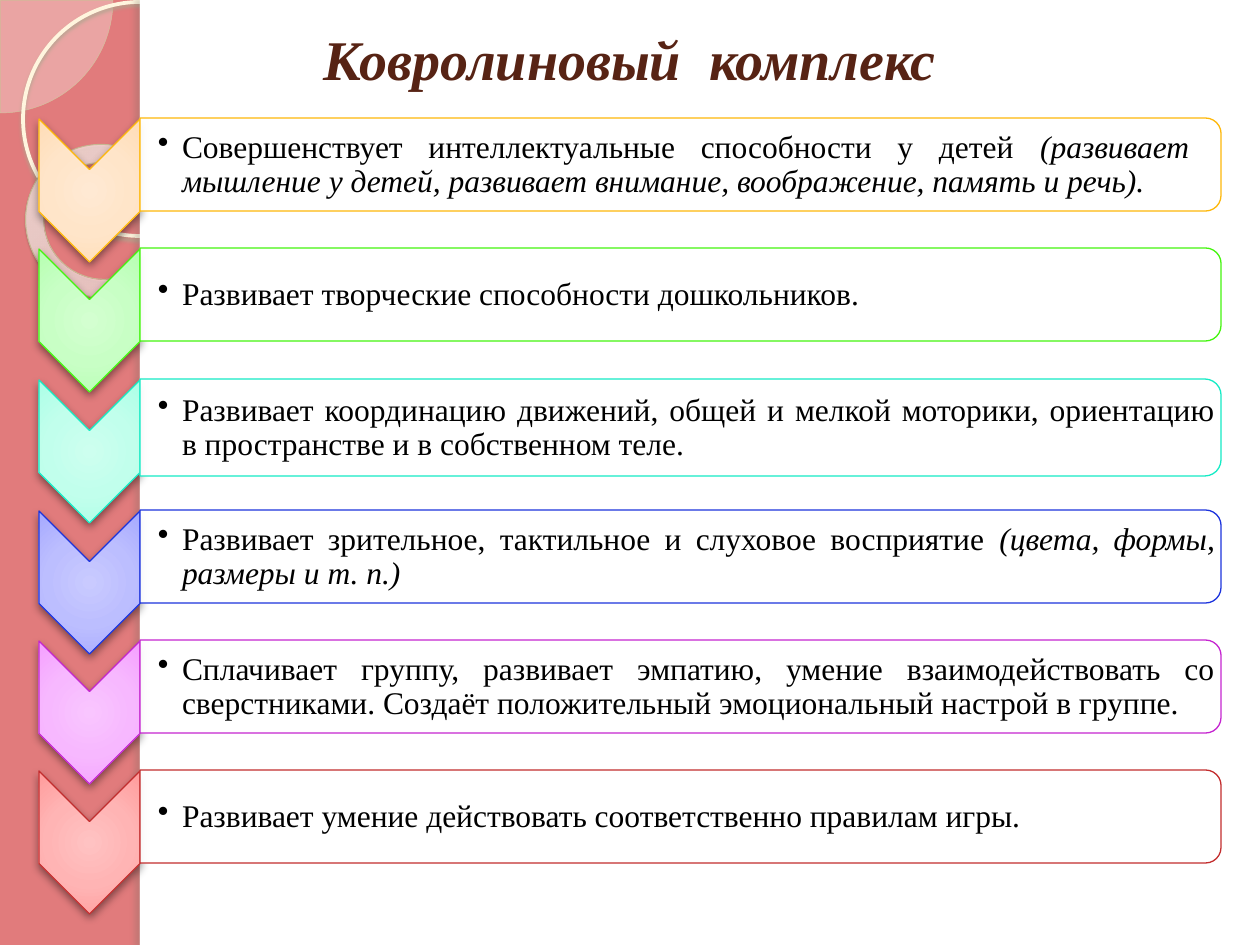
from lxml.etree import SubElement
from pptx import Presentation
from pptx.dml.color import RGBColor
from pptx.enum.shapes import MSO_SHAPE
from pptx.enum.text import MSO_ANCHOR, PP_ALIGN
from pptx.oxml.ns import qn
from pptx.util import Inches, Pt

EMU_PER_PX = Inches(1) / 126
FONT = "Times New Roman"
WHITE = RGBColor(255, 255, 255)
BLACK = RGBColor(0, 0, 0)
CORAL = RGBColor(0xE1, 0x7B, 0x7C)
BROWN = RGBColor(0x57, 0x23, 0x14)
CREAM = RGBColor(0xFE, 0xFA, 0xF4)
IVORY = RGBColor(0xFF, 0xF5, 0xDE)
SAND = RGBColor(0xD3, 0xC3, 0x9F)
TAN = RGBColor(0xC7, 0xB8, 0x93)
RING_STOPS = [(0, RGBColor(0xFF, 0xFC, 0xF6), 70), (70, RGBColor(0xFF, 0xFE, 0xFB), 55),
              (100, RGBColor(0xF0, 0xD2, 0x8E), 60)]
CIRCLE_SHADOW = (RGBColor(0xB0, 0xA6, 0x8F), 85, 2, 2, 90)
RING_SHADOW = (RGBColor(0x5A, 0x54, 0x44), 35, 1, 1.2, 75)
EDGE_SHADOW = (RGBColor(0x73, 0x6F, 0x63), 25, 3, 3, 180)
CHEVRON_SHADOW = (BLACK, 43, 5, 2, 90)

FIRST_TOP, ROW_PITCH = 118, 130.5
BAR_HEIGHT, TALL_BAR_HEIGHT = 93, 97
ITEMS = [
    ("FEB80A", "FFE9D3 FFE5C9 FFDDB7 FFDBB2", BAR_HEIGHT,
     "Совершенствует интеллектуальные способности у детей ",
     "(развивает  мышление у детей, развивает внимание, воображение, память и речь)."),
    ("44F50E", "D3FFD0 C8FFC5 B7FFB2 B2FFAD", BAR_HEIGHT,
     "Развивает творческие способности дошкольников.", ""),
    ("14EBC5", "CDFFEF C1FFEC ADFFE7 A8FFE6", TALL_BAR_HEIGHT,
     "Развивает координацию движений, общей и мелкой моторики, "
     "ориентацию в пространстве и в собственном теле.", ""),
    ("1C33DD", "C9CAFF BCBEFF A7AAFF A1A4FF", BAR_HEIGHT,
     "Развивает зрительное, тактильное и слуховое восприятие ",
     "(цвета, формы, размеры и т. п.)"),
    ("C525D0", "F9C5FF F7B8FF F5A1FF F59BFF", BAR_HEIGHT,
     "Сплачивает группу, развивает эмпатию, умение взаимодействовать со сверстниками. "
     "Создаёт положительный эмоциональный настрой в группе.", ""),
    ("C32D2E", "FFC2C2 FFB4B4 FF9C9C FF9595", BAR_HEIGHT,
     "Развивает умение действовать соответственно правилам игры.", ""),
]


def px(length):
    """Turn pixels into EMU."""
    return round(length * EMU_PER_PX)


def set_format(target, values):
    """Set each named value on the target."""
    for name, value in values.items():
        setattr(target, name, value)


def add_color(parent, color, opacity=100):
    """Append an RGB colour with an opacity in percent."""
    element = SubElement(parent, qn("a:srgbClr"), val=str(color))
    SubElement(element, qn("a:alpha"), val=str(opacity * 1000))


def fill_gradient(shape, stops, focus):
    """Fill a shape with a circular gradient around the focus rectangle."""
    shape.fill.gradient()
    gradient = shape._element.spPr.find(qn("a:gradFill"))
    for child in list(gradient):
        gradient.remove(child)
    stop_list = SubElement(gradient, qn("a:gsLst"))
    for position, color, opacity in stops:
        stop = SubElement(stop_list, qn("a:gs"), pos=str(position * 1000))
        add_color(stop, color, opacity)
    circle = SubElement(gradient, qn("a:path"), path="circle")
    sides = {side: str(value * 1000) for side, value in zip("ltrb", focus)}
    SubElement(circle, qn("a:fillToRect"), sides)


def add_shadow(shape, color, opacity, blur, distance, angle):
    """Give a shape an outer shadow."""
    effects = shape._element.spPr.find(qn("a:effectLst"))
    shadow = SubElement(effects, qn("a:outerShdw"), blurRad=str(Pt(blur)), dist=str(Pt(distance)),
                        dir=str(angle * 60000), algn="ctr", rotWithShape="0")
    add_color(shadow, color, opacity)


def draw_shape(slide, kind, box, fill=None, opacity=100, line=None, line_width=0.75,
               shadow=None, rotation=0):
    """Draw a preset shape with plain fill, outline and optional shadow."""
    shape = slide.shapes.add_shape(kind, *map(px, box))
    shape.rotation = rotation
    shape.shadow.inherit = False
    if fill is None:
        shape.fill.background()
    else:
        shape.fill.solid()
        shape.fill.fore_color.rgb = fill
        color = shape._element.spPr.find(qn("a:solidFill"))[0]
        SubElement(color, qn("a:alpha"), val=str(opacity * 1000))
    if line is None:
        shape.line.fill.background()
    else:
        shape.line.color.rgb = line
        shape.line.width = Pt(line_width)
    if shadow:
        add_shadow(shape, *shadow)
    return shape


def quarter_turned(left, top, width, height):
    """Return the unrotated box that covers this one after a quarter turn."""
    shift = (width - height) / 2
    return left + shift, top - shift, height, width


def add_decoration(slide):
    """Draw the coral side band with its circles and the white page."""
    pie = draw_shape(slide, MSO_SHAPE.PIE, (-112, -112, 225, 225), CREAM, 33, SAND, 0.25)
    pie.adjustments[0], pie.adjustments[1] = 0, 54
    draw_shape(slide, MSO_SHAPE.OVAL, (23, 2, 234, 234), line=IVORY, line_width=2.15,
               shadow=CIRCLE_SHADOW)
    ring = draw_shape(slide, MSO_SHAPE.DONUT, (25, 145, 155, 152), line=TAN, line_width=0.58,
                      shadow=RING_SHADOW, rotation=38.6)
    ring.adjustments[0] = 0.12
    fill_gradient(ring, RING_STOPS, (-408, -50, 508, 150))
    draw_shape(slide, MSO_SHAPE.RECTANGLE, (140, 0, 1120, 945), WHITE)
    draw_shape(slide, MSO_SHAPE.RECTANGLE, (140, 0, 10, 945), WHITE, shadow=EDGE_SHADOW)


def add_run(paragraph, text, size, color, bold=False, italic=False):
    """Append a formatted run."""
    run = paragraph.add_run()
    run.text = text
    set_format(run.font, {"name": FONT, "size": Pt(size), "bold": bold, "italic": italic})
    run.font.color.rgb = color


def add_title(slide, text):
    """Place the title placeholder above the decoration."""
    title = slide.shapes.title
    slide.shapes._spTree.append(title._element)
    set_format(title, {"left": px(63), "top": px(38), "width": px(1134), "height": px(99)})
    set_format(title.text_frame, {"vertical_anchor": MSO_ANCHOR.MIDDLE, "word_wrap": True,
                                  "margin_top": 0, "margin_bottom": px(58)})
    paragraph = title.text_frame.paragraphs[0]
    paragraph.alignment = PP_ALIGN.CENTER
    add_run(paragraph, text, 32, BROWN, bold=True, italic=True)


def add_bullet_text(slide, box, plain, emphasis):
    """Add a bulleted paragraph with an optional italic ending."""
    frame = slide.shapes.add_textbox(*map(px, box)).text_frame
    set_format(frame, {"word_wrap": True, "vertical_anchor": MSO_ANCHOR.MIDDLE,
                       "margin_left": px(18), "margin_top": px(1),
                       "margin_right": px(1), "margin_bottom": px(1)})
    paragraph = frame.paragraphs[0]
    set_format(paragraph, {"alignment": PP_ALIGN.JUSTIFY, "line_spacing": 0.9})
    properties = paragraph._p.get_or_add_pPr()
    properties.set("marL", str(px(24)))
    properties.set("indent", str(px(-24)))
    SubElement(properties, qn("a:buChar"), char="•")
    add_run(paragraph, plain, 18, BLACK)
    if emphasis:
        add_run(paragraph, emphasis, 18, BLACK, italic=True)


def add_item(slide, top, accent, shades, height, plain, emphasis):
    """Draw one chevron with its bar and text."""
    line = RGBColor.from_string(accent)
    chevron = draw_shape(slide, MSO_SHAPE.CHEVRON, quarter_turned(39, top + 1, 101, 143),
                         line=line, shadow=CHEVRON_SHADOW, rotation=90)
    stops = [(position, RGBColor.from_string(shade), 100)
             for position, shade in zip((0, 50, 97, 100), shades.split())]
    fill_gradient(chevron, stops, (50, 50, 50, 50))
    draw_shape(slide, MSO_SHAPE.ROUND_2_SAME_RECTANGLE, quarter_turned(140, top, 1081, height),
               WHITE, 90, line, rotation=90)
    add_bullet_text(slide, (140, top + 5, 1076, height - 9), plain, emphasis)


def main():
    """Build and save the slide."""
    presentation = Presentation()
    set_format(presentation, {"slide_width": px(1260), "slide_height": px(945)})
    slide = presentation.slides.add_slide(presentation.slide_layouts[5])
    slide.background.fill.solid()
    slide.background.fill.fore_color.rgb = CORAL
    add_decoration(slide)
    add_title(slide, "Ковролиновый  комплекс")
    for index, item in enumerate(ITEMS):
        add_item(slide, round(FIRST_TOP + index * ROW_PITCH), *item)
    presentation.save("out.pptx")


if __name__ == "__main__":
    main()
